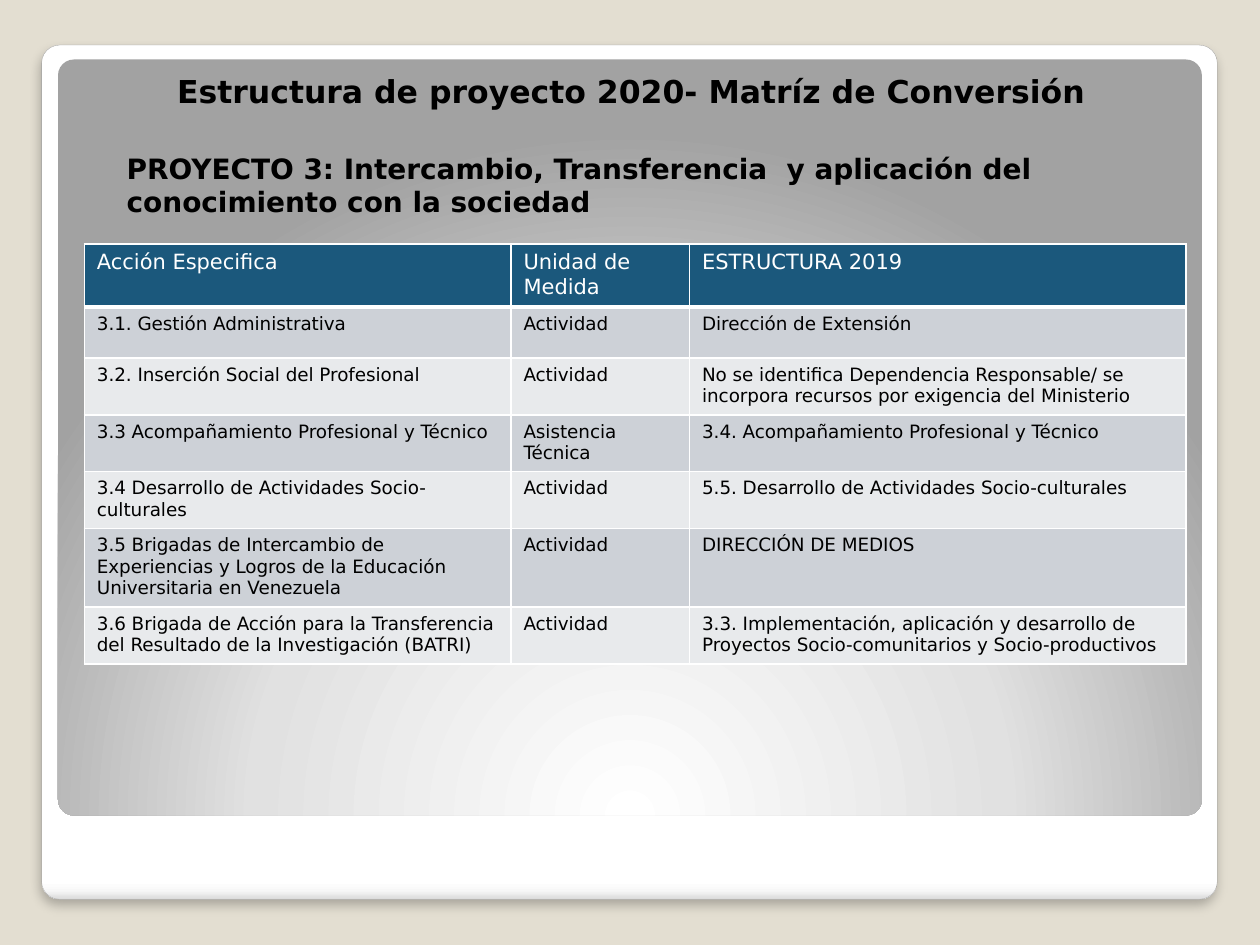
"""Build the project structure slide with its conversion table."""
from typing import NamedTuple

from lxml.etree import SubElement as Sub
from pptx import Presentation
from pptx.dml.color import RGBColor
from pptx.enum.shapes import MSO_SHAPE as Kind
from pptx.enum.text import MSO_ANCHOR as Anchor, MSO_AUTO_SIZE as Fit, PP_ALIGN as Align
from pptx.oxml.ns import qn
from pptx.util import Cm, Pt

FONT = "DejaVu Sans"
BLACK = RGBColor(0x00, 0x00, 0x00)
WHITE = RGBColor(0xFF, 0xFF, 0xFF)
SAND = RGBColor(0xE3, 0xDE, 0xD1)
GRAY = RGBColor(0xA4, 0xA4, 0xA4)
NAVY = RGBColor(0x1B, 0x58, 0x7C)
BANDS = (RGBColor(0xCD, 0xD1, 0xD7), RGBColor(0xE8, 0xEA, 0xEC))


class Box(NamedTuple):
    left: float
    top: float
    width: float
    height: float

    def place(self) -> tuple:
        return tuple(Cm(side) for side in self)


class Card(NamedTuple):
    box: Box
    stops: tuple
    round: bool
    edge: bool


class Row(NamedTuple):
    height: float
    cells: tuple


CARDS = (
    Card(Box(0.84, 0.91, 23.7, 17.22),
         ((0, "FFFFFF"), (98, "FFFFFF"), (99, "F7F7F7"), (100, "DADADA")), False, True),
    Card(Box(1.17, 1.2, 23.06, 15.24),
         ((0, "FFFFFF"), (55, "E1E1E1"), (100, "A2A2A2")), True, False),
)
WIDTHS = (8.6, 3.6, 10.01)
ROWS = (
    Row(1.27, ("Acción Especifica", "Unidad de Medida", "ESTRUCTURA 2019")),
    Row(1.03, ("3.1. Gestión Administrativa", "Actividad", "Dirección de Extensión")),
    Row(1.14, ("3.2. Inserción Social del Profesional", "Actividad",
               "No se identifica Dependencia Responsable/ se incorpora recursos "
               "por exigencia del Ministerio")),
    Row(1.14, ("3.3 Acompañamiento Profesional y Técnico", "Asistencia Técnica",
               "3.4. Acompañamiento Profesional y Técnico")),
    Row(1.14, ("3.4 Desarrollo de Actividades Socio-culturales", "Actividad",
               "5.5. Desarrollo de Actividades Socio-culturales")),
    Row(1.59, ("3.5 Brigadas de Intercambio de Experiencias y Logros de la "
               "Educación Universitaria en Venezuela", "Actividad", "DIRECCIÓN DE MEDIOS")),
    Row(1.14, ("3.6 Brigada de Acción para la Transferencia del Resultado de la "
               "Investigación (BATRI)", "Actividad",
               "3.3. Implementación, aplicación y desarrollo de Proyectos "
               "Socio-comunitarios y Socio-productivos")),
)


def write(frame, text: str, *, size: float, color=BLACK, bold=False, align=Align.LEFT) -> None:
    frame.text = text
    para = frame.paragraphs[0]
    para.alignment = align
    para.space_before = Pt(0)
    font = para.runs[0].font
    font.name, font.size, font.bold = FONT, Pt(size), bold
    font.color.rgb = color


def head(shape, box: Box, text: str, *, wrap: bool, **style) -> None:
    shape.left, shape.top, shape.width, shape.height = box.place()
    frame = shape.text_frame
    write(frame, text, **style)
    frame.word_wrap = wrap
    frame.auto_size = Fit.SHAPE_TO_FIT_TEXT
    frame.vertical_anchor = Anchor.TOP


def plain(para) -> None:
    props = para._p.get_or_add_pPr()
    props.set("marL", "0")
    props.set("indent", "0")
    Sub(props, qn("a:buNone"))


def blend(shape, card: Card) -> None:
    shape.fill.gradient()
    grad = shape.element.spPr.find(qn("a:gradFill"))
    for child in list(grad):
        grad.remove(child)
    stops = Sub(grad, qn("a:gsLst"))
    for spot, tone in card.stops:
        stop = Sub(stops, qn("a:gs"), pos=str(spot * 1000))
        Sub(stop, qn("a:srgbClr"), val=tone)
    if card.round:
        path = Sub(grad, qn("a:path"), path="circle")
        Sub(path, qn("a:fillToRect"), l="50000", t="175000", r="50000", b="-75000")
    else:
        Sub(grad, qn("a:lin"), ang="5400000", scaled="0")


def shade(shape) -> None:
    list_ = shape.element.spPr.find(qn("a:effectLst"))
    drop = Sub(list_, qn("a:outerShdw"), blurRad=str(Pt(6)), dist=str(Pt(4)),
               dir="5400000", algn="t", rotWithShape="0")
    tone = Sub(drop, qn("a:srgbClr"), val=str(BLACK))
    Sub(tone, qn("a:alpha"), val="25000")


def draw(slide, card: Card) -> None:
    shape = slide.shapes.add_shape(Kind.ROUNDED_RECTANGLE, *card.box.place())
    shape.adjustments[0] = 0.021
    shape.shadow.inherit = False
    blend(shape, card)
    if card.edge:
        shape.line.color.rgb = GRAY
        shape.line.width = Pt(0.16)
        shade(shape)
    else:
        shape.line.fill.background()
    slide.shapes.title.element.addprevious(shape.element)


def frame(cell, base: float) -> None:
    props = cell._tc.get_or_add_tcPr()
    for side, width in zip("LRTB", (1, 1, 1, base)):
        line = Sub(props, qn(f"a:ln{side}"), w=str(Pt(width)))
        fill = Sub(line, qn("a:solidFill"))
        Sub(fill, qn("a:srgbClr"), val=str(WHITE))


def grid(slide, box: Box) -> None:
    table = slide.shapes.add_table(len(ROWS), len(WIDTHS), *box.place()).table
    table.first_row = table.horz_banding = False
    for col, width in zip(table.columns, WIDTHS):
        col.width = Cm(width)
    for rank, row in enumerate(ROWS):
        table.rows[rank].height = Cm(row.height)
        top = rank == 0
        for spot, text in enumerate(row.cells):
            cell = table.cell(rank, spot)
            write(cell.text_frame, text, size=12 if top else 10.5,
                  color=WHITE if top else BLACK)
            frame(cell, 3 if top else 1)
            cell.fill.solid()
            cell.fill.fore_color.rgb = NAVY if top else BANDS[(rank - 1) % 2]


def main() -> None:
    deck = Presentation()
    deck.slide_width, deck.slide_height = Cm(25.4), Cm(19.05)
    slide = deck.slides.add_slide(deck.slide_layouts[1])
    slide.background.fill.solid()
    slide.background.fill.fore_color.rgb = SAND
    for card in CARDS:
        draw(slide, card)
    head(slide.shapes.title, Box(3.3, 1.32, 18.85, 1.02),
         "Estructura de proyecto 2020- Matríz de Conversión",
         wrap=False, size=18, bold=True, align=Align.CENTER)
    body = slide.placeholders[1]
    head(body, Box(2.3, 2.92, 21.6, 1.63),
         "PROYECTO 3: Intercambio, Transferencia  y aplicación del conocimiento con la sociedad",
         wrap=True, size=16, bold=True)
    plain(body.text_frame.paragraphs[0])
    grid(slide, Box(1.7, 4.92, sum(WIDTHS), sum(row.height for row in ROWS)))
    deck.save("out.pptx")


if __name__ == "__main__":
    main()
